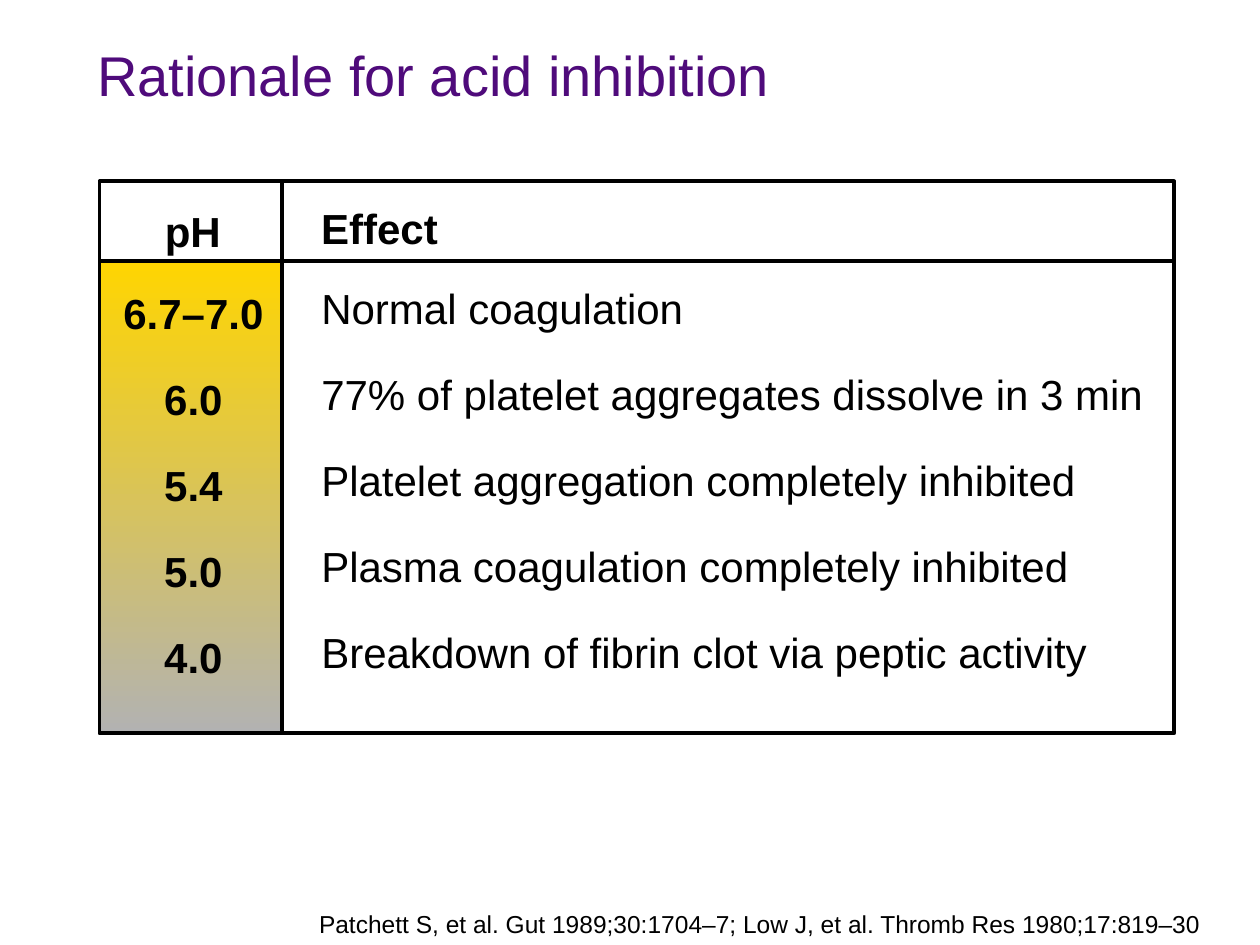
from lxml import etree
from pptx import Presentation
from pptx import util as u
from pptx.dml.color import RGBColor
from pptx.enum import shapes, text
from pptx.oxml.ns import qn

COLOURS = {"title": "4F0B7B", "ink": "000000", "high": "FFD501", "low": "B2B2B2"}
ROWS = [
    ("6.7–7.0", "Normal coagulation"),
    ("6.0", "77% of platelet aggregates dissolve in 3 min"),
    ("5.4", "Platelet aggregation completely inhibited"),
    ("5.0", "Plasma coagulation completely inhibited"),
    ("4.0", "Breakdown of fibrin clot via peptic activity"),
]
ROW_GAP = 20.4
LEFT, DIVIDER, RIGHT = 0.79, 2.24, 9.32
TOP, HEADER, BOTTOM = 1.44, 2.07, 5.82
EFFECT_LEFT = 2.45


def write(box, place, lines, size=24, bold=False, colour="ink", align=text.PP_ALIGN.LEFT,
          anchor=text.MSO_ANCHOR.TOP, spacing=1.0, hanging=False, wrap=True):
    """Place a box (left, top, width, height in inches) and fill it, one paragraph a line."""
    box.left, box.top, box.width, box.height = map(u.Inches, place)
    frame = box.text_frame
    frame.word_wrap = wrap
    frame.auto_size = text.MSO_AUTO_SIZE.NONE
    frame.vertical_anchor = anchor
    for index, line in enumerate(lines):
        para = frame.paragraphs[0] if index == 0 else frame.add_paragraph()
        para.alignment = align
        para.line_spacing = spacing
        para.space_before = u.Pt(ROW_GAP if index else 0)
        if hanging:
            props = para._p.get_or_add_pPr()
            props.set("marL", str(u.Inches(0.38)))
            props.set("indent", str(-u.Inches(0.38)))
            etree.SubElement(props, qn("a:buNone"))
        span = para.add_run()
        span.text = line
        span.font.name = "Arial"
        span.font.size = u.Pt(size)
        span.font.bold = bold
        span.font.color.rgb = RGBColor.from_string(COLOURS[colour])


deck = Presentation()
deck.slide_width, deck.slide_height = u.Inches(10), u.Inches(7.5)
page = deck.slides.add_slide(deck.slide_layouts[1])
title, effects = page.placeholders

write(title, (0.67, 0.33, 9.33, 1.25), ["Rationale for acid inhibition"],
      size=32, colour="title", spacing=0.9)

# Acidity scale behind the pH column, and the frame of the whole table
panels = []
for left, top, right, bottom in [(LEFT, HEADER, DIVIDER, BOTTOM), (LEFT, TOP, RIGHT, BOTTOM)]:
    panel = page.shapes.add_shape(
        shapes.MSO_SHAPE.RECTANGLE, u.Inches(left), u.Inches(top),
        u.Inches(right - left), u.Inches(bottom - top))
    panel.shadow.inherit = False
    panels.append(panel)
scale, frame = panels

scale.line.fill.background()
scale.fill.gradient()
scale.fill.gradient_angle = 270
for stop, name, position in zip(scale.fill.gradient_stops, ("high", "low"), (0, 1)):
    stop.color.rgb = RGBColor.from_string(COLOURS[name])
    stop.position = position

frame.fill.background()
rules = [frame]
for ends in [(LEFT, HEADER, RIGHT, HEADER), (DIVIDER, TOP, DIVIDER, BOTTOM)]:
    rule = page.shapes.add_connector(shapes.MSO_CONNECTOR.STRAIGHT, *map(u.Inches, ends))
    etree.SubElement(rule._element.spPr, qn("a:effectLst"))
    rules.append(rule)
for rule in rules:
    rule.line.color.rgb = RGBColor.from_string(COLOURS["ink"])
    rule.line.width = u.Pt(2.25)

ph_header, effect_header, ph_values, reference = [
    page.shapes.add_textbox(0, 0, 0, 0) for _ in range(4)]
write(ph_header, (1.21, 1.46, 0.65, 0.62), ["pH"], bold=True, spacing=1.3, wrap=False)
write(effect_header, (EFFECT_LEFT, 1.56, 1.35, 0.5), ["Effect"], bold=True, hanging=True)
write(ph_values, (0.84, 2.23, 1.39, 3.38), [ph for ph, _ in ROWS],
      bold=True, align=text.PP_ALIGN.CENTER)
write(effects, (EFFECT_LEFT, 2.19, 7.06, 3.38), [effect for _, effect in ROWS], hanging=True)
write(reference, (0.32, 7.15, 9.31, 0.35),
      ["Patchett S, et al. Gut 1989;30:1704–7; Low J, et al. Thromb Res 1980;17:819–30"],
      size=14, align=text.PP_ALIGN.RIGHT, anchor=text.MSO_ANCHOR.BOTTOM, spacing=u.Pt(18))

deck.save("out.pptx")
